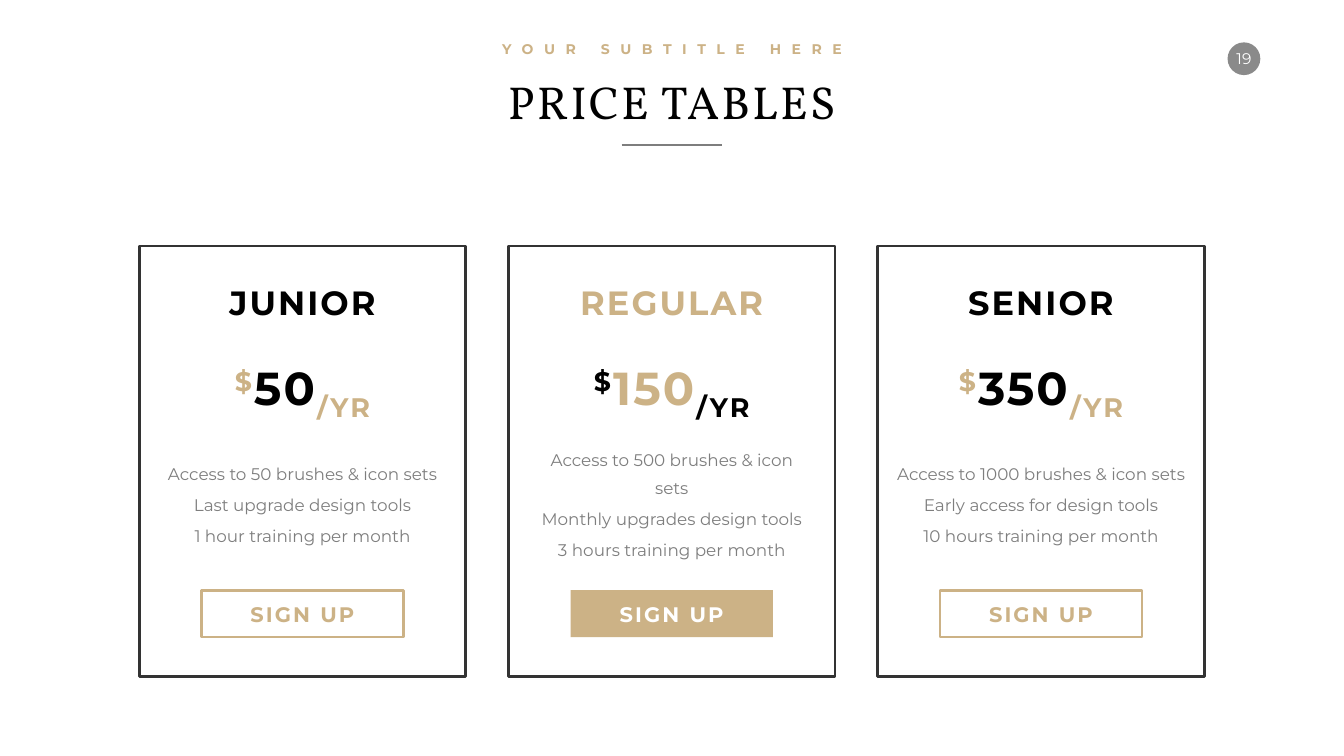
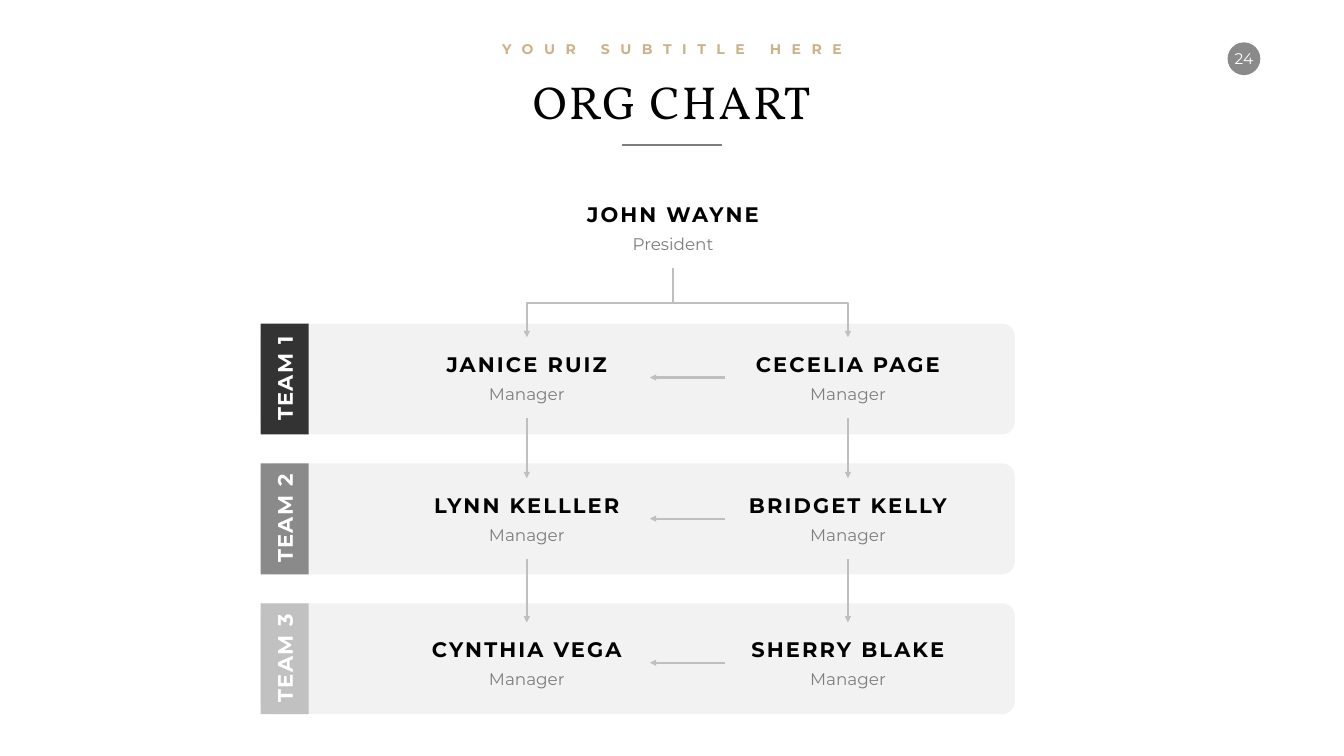
import pptx
import pptx.dml.color
import pptx.enum.shapes
import pptx.enum.text
import pptx.oxml.ns
import pptx.oxml.xmlchemy
import pptx.util
from lxml import etree

SHAPE = pptx.enum.shapes.MSO_SHAPE
CONNECTOR = pptx.enum.shapes.MSO_CONNECTOR
ANCHOR = pptx.enum.text.MSO_ANCHOR
FIT = pptx.enum.text.MSO_AUTO_SIZE
CENTER = pptx.enum.text.PP_ALIGN.CENTER
Pt = pptx.util.Pt

COLOURS = {
    "white": "FFFFFF", "black": "000000", "gold": "CCB286", "charcoal": "333333",
    "badge": "8A8A8A", "silver": "C2C1C2", "panel": "F2F2F2", "grey": "7E7E7E",
    "arrow": "BFBFBF",
}
BODY_FONT, TITLE_FONT = "Montserrat", "Vollkorn"
COLUMNS, ROWS = 26.66, 15
MIDDLE = COLUMNS / 2

CARD_LEFT, CARD_TOP, CARD_WIDTH, CARD_HEIGHT, CARD_STEP = 2.76, 4.88, 6.48, 8.54, 7.325
BUTTON_WIDTH = 4.01
PLANS = [
    {"name": "JUNIOR", "name_width": 3.18, "price": "50", "price_width": 3.09,
     "features_width": 5.73, "featured": False,
     "features": ["Access to 50 brushes & icon sets", "Last upgrade design tools",
                  "1 hour training per month"]},
    {"name": "REGULAR", "name_width": 3.91, "price": "150", "price_width": 3.49,
     "features_width": 5.73, "featured": True,
     "features": ["Access to 500 brushes & icon sets", "Monthly upgrades design tools",
                  "3 hours training per month"]},
    {"name": "SENIOR", "name_width": 3.16, "price": "350", "price_width": 3.68,
     "features_width": 6.07, "featured": False,
     "features": ["Access to 1000 brushes & icon sets", "Early access for design tools",
                  "10 hours training per month"]},
]

TEAM_LEFT, TEAM_TOP, TEAM_WIDTH, TEAM_HEIGHT, TEAM_STEP = 5.17, 6.42, 14.96, 2.2, 2.775
LABEL_WIDTH = 0.95
MANAGER_CENTRES = (10.45, 16.82)
PRESIDENT_TOP = 3.94
ARROW_START, ARROW_GAP, ARROW_SIDE = 1.38, 0.23, 0.57
TEAMS = [
    {"label": "TEAM 1", "label_width": 1.92, "colour": "charcoal", "top": 6.92,
     "managers": [("JANICE RUIZ", 3.46), ("CECELIA PAGE", 3.96)]},
    {"label": "TEAM 2", "label_width": 2, "colour": "badge", "top": 9.72,
     "managers": [("LYNN KELLLER", 3.99), ("BRIDGET KELLY", 4.24)]},
    {"label": "TEAM 3", "label_width": 2, "colour": "silver", "top": 12.58,
     "managers": [("CYNTHIA VEGA", 4.06), ("SHERRY BLAKE", 4.11)]},
]


def cells(*lengths):
    """Turn grid cells, one inch each, into slide lengths."""
    return [pptx.util.Inches(length) for length in lengths]


def colour(name):
    """Look up a colour by name."""
    return pptx.dml.color.RGBColor.from_string(COLOURS[name])


def add_run(paragraph, words, size, ink, bold=False, spacing=0, baseline=0, font=BODY_FONT):
    """Add one formatted run, with letter spacing in points and baseline in percent."""
    run = paragraph.add_run()
    run.text = words
    run.font.size = Pt(size)
    run.font.name = font
    run.font.bold = bold
    run.font.color.rgb = colour(ink)
    properties = run._r.get_or_add_rPr()
    if spacing:
        properties.set("spc", str(spacing * 100))
    if baseline:
        properties.set("baseline", str(baseline * 1000))


def add_text(slide, centre, top, width, height, anchor=ANCHOR.MIDDLE, wrap=False):
    """Add a centred text box and return it with its first paragraph."""
    box = slide.shapes.add_textbox(*cells(centre - width / 2, top, width, height))
    frame = box.text_frame
    frame.word_wrap = wrap
    frame.auto_size = FIT.SHAPE_TO_FIT_TEXT
    frame.vertical_anchor = anchor
    frame.paragraphs[0].alignment = CENTER
    return box, frame.paragraphs[0]


def add_label(slide, centre, top, width, words, ink="black", size=30, height=0.61, spacing=3):
    """Add one line of bold spaced capitals."""
    box, paragraph = add_text(slide, centre, top, width, height)
    add_run(paragraph, words, size, ink, True, spacing)
    return box


def add_block(slide, left, top, width, height, fill, border=None, kind=SHAPE.RECTANGLE):
    """Add a flat filled shape with an optional border."""
    block = slide.shapes.add_shape(kind, *cells(left, top, width, height))
    block.shadow.inherit = False
    block.fill.solid()
    block.fill.fore_color.rgb = colour(fill)
    if border:
        block.line.color.rgb = colour(border)
        block.line.width = Pt(4)
    else:
        block.line.fill.background()
    return block


def add_line(slide, start, end, ink="arrow", arrow=True, kind=CONNECTOR.STRAIGHT):
    """Add a connector between two grid points, with an arrowhead at its end."""
    line = slide.shapes.add_connector(kind, *cells(*start, *end))
    line.line.color.rgb = colour(ink)
    line.line.width = Pt(3)
    properties = line._element.spPr
    if arrow:
        tail = etree.SubElement(properties.get_or_add_ln(), pptx.oxml.ns.qn("a:tailEnd"))
        tail.set("type", "triangle")
    etree.SubElement(properties, pptx.oxml.ns.qn("a:effectLst"))
    return line


def add_branch(slide, start, end):
    """Add an elbow arrow that leaves downwards, runs sideways and drops to its end."""
    across, drop = abs(end[0] - start[0]), end[1] - start[1]
    centre, middle = (start[0] + end[0]) / 2, (start[1] + end[1]) / 2
    rightward = end[0] > start[0]
    side = drop / 2 if rightward else -drop / 2
    branch = add_line(slide, (centre + side, middle - across / 2),
                      (centre - side, middle + across / 2), kind=CONNECTOR.ELBOW)
    degrees = 270 if rightward else 90
    branch._element.spPr.xfrm.set("rot", str(degrees * 60000))


def add_titled_slide(deck, title, title_width, number):
    """Add a slide with the shared subtitle, title, rule and page badge."""
    slide = deck.slides.add_slide(deck.slide_layouts[5])
    slide.background.fill.solid()
    slide.background.fill.fore_color.rgb = colour("white")

    badge = add_block(slide, 24.35, 0.84, 0.65, 0.65, "badge", kind=SHAPE.OVAL)
    frame = badge.text_frame
    frame.margin_left = frame.margin_right = frame.margin_top = frame.margin_bottom = 0
    frame.word_wrap = False
    frame.vertical_anchor = ANCHOR.MIDDLE
    frame.paragraphs[0].alignment = CENTER
    add_run(frame.paragraphs[0], number, 22, "white")

    heading = slide.shapes.title
    heading.left, heading.top, heading.width, heading.height = cells(
        MIDDLE - title_width / 2, 1.4, title_width, 1.21)
    heading.text_frame.word_wrap = False
    heading.text_frame.auto_size = FIT.SHAPE_TO_FIT_TEXT
    heading.text_frame.vertical_anchor = ANCHOR.TOP
    heading.text_frame.paragraphs[0].alignment = CENTER
    add_run(heading.text_frame.paragraphs[0], title, 66, "black", spacing=3, font=TITLE_FONT)

    subtitle = add_text(slide, MIDDLE, 0.76, 7.17, 0.44, ANCHOR.TOP)[1]
    add_run(subtitle, "YOUR SUBTITLE HER", 20, "gold", True, 15)
    add_run(subtitle, "E", 20, "gold", True)
    add_line(slide, (12.33, 2.88), (14.32, 2.88), "grey", arrow=False)
    return slide


def add_plan(slide, column, plan):
    """Add one price card in the given column."""
    left = CARD_LEFT + column * CARD_STEP
    centre = left + CARD_WIDTH / 2
    main, accent = ("gold", "black") if plan["featured"] else ("black", "gold")
    add_block(slide, left, CARD_TOP, CARD_WIDTH, CARD_HEIGHT, "white", "charcoal")
    add_label(slide, centre, 5.53, plan["name_width"], plan["name"], main, 48, 0.91)

    price = add_text(slide, centre, 7.15, plan["price_width"], 1.21)[1]
    for words, ink, baseline in (("$", accent, 30), (plan["price"], main, 0),
                                 ("/YR", accent, -25)):
        add_run(price, words, 66, ink, True, 3, baseline)

    features, line = add_text(slide, centre, 8.99, plan["features_width"], 1.89, wrap=True)
    for index, feature in enumerate(plan["features"]):
        if index:
            line = features.text_frame.add_paragraph()
        line.alignment = CENTER
        line.line_spacing = Pt(40)
        line.space_before = Pt(4.8)
        add_run(line, feature, 24, "grey")

    fill, border, ink = ("gold", None, "white") if plan["featured"] else ("white", "gold", "gold")
    add_block(slide, centre - BUTTON_WIDTH / 2, 11.71, BUTTON_WIDTH, 0.93, fill, border)
    add_label(slide, centre, 11.87, 2.33, "SIGN UP", ink)


def add_person(slide, centre, top, name, width, role, role_width):
    """Add a name with the role beneath it."""
    add_label(slide, centre, top, width, name)
    add_run(add_text(slide, centre, top + 0.64, role_width, 0.5)[1], role, 24, "grey")


def add_team_band(slide, row, team):
    """Add the rounded band of a team with its upright label."""
    top = TEAM_TOP + row * TEAM_STEP
    band = add_block(slide, TEAM_LEFT, top, TEAM_WIDTH, TEAM_HEIGHT, "panel",
                     kind=SHAPE.ROUNDED_RECTANGLE)
    band.adjustments[0] = 0.113
    tab = add_block(slide, TEAM_LEFT, top, LABEL_WIDTH, TEAM_HEIGHT, team["colour"],
                    kind=SHAPE.ROUNDED_RECTANGLE)
    tab.adjustments[0] = 0
    label = add_label(slide, TEAM_LEFT + LABEL_WIDTH / 2, top + TEAM_HEIGHT / 2 - 0.31,
                      team["label_width"], team["label"], "white", spacing=2)
    label.rotation = 270


def add_team_members(slide, team, next_team):
    """Add the managers of a team and the arrows that leave them."""
    top = team["top"]
    for centre, (name, width) in zip(MANAGER_CENTRES, team["managers"]):
        add_person(slide, centre, top, name, width, "Manager", 1.71)
        if next_team:
            add_line(slide, (centre, top + ARROW_START), (centre, next_team["top"] - ARROW_GAP))
    add_line(slide, (14.39, top + ARROW_SIDE), (12.89, top + ARROW_SIDE))


def main():
    """Build the price tables and the org chart."""
    deck = pptx.Presentation()
    deck.slide_width, deck.slide_height = cells(COLUMNS, ROWS)

    prices = add_titled_slide(deck, "PRICE TABLES", 6.97, "19")
    for column, plan in enumerate(PLANS):
        add_plan(prices, column, plan)

    org = add_titled_slide(deck, "ORG CHART", 5.96, "24")
    for row, team in enumerate(TEAMS):
        add_team_band(org, row, team)
    for team, next_team in zip(TEAMS, TEAMS[1:] + [None]):
        add_team_members(org, team, next_team)
    add_person(org, 13.35, PRESIDENT_TOP, "JOHN WAYNE", 3.72, "President", 1.81)
    for centre in reversed(MANAGER_CENTRES):
        add_branch(org, (13.35, PRESIDENT_TOP + ARROW_START),
                   (centre, TEAMS[0]["top"] - ARROW_GAP))

    deck.save("out.pptx")


if __name__ == "__main__":
    main()
